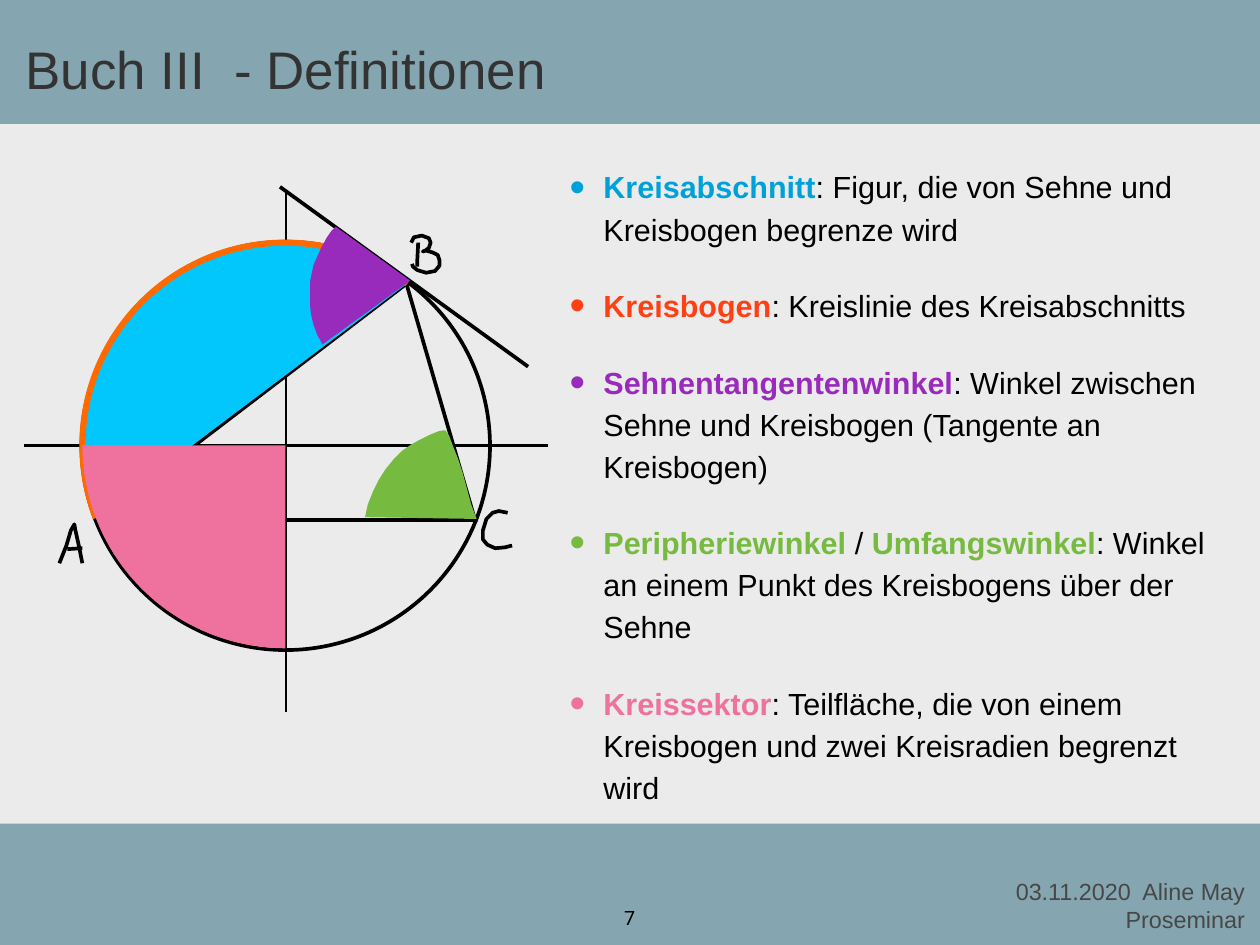
from dataclasses import dataclass
from math import cos, radians, sin

from lxml import etree
from pptx import Presentation
from pptx.dml.color import RGBColor
from pptx.enum.shapes import MSO_CONNECTOR, MSO_SHAPE
from pptx.enum.text import MSO_ANCHOR, MSO_AUTO_SIZE, PP_ALIGN
from pptx.oxml.ns import qn
from pptx.util import Emu, Pt

RECTANGLE, OVAL = MSO_SHAPE.RECTANGLE, MSO_SHAPE.OVAL
STRAIGHT = MSO_CONNECTOR.STRAIGHT
TOP, MIDDLE, BOTTOM = MSO_ANCHOR.TOP, MSO_ANCHOR.MIDDLE, MSO_ANCHOR.BOTTOM
LEFT, CENTER, RIGHT = PP_ALIGN.LEFT, PP_ALIGN.CENTER, PP_ALIGN.RIGHT
NO_AUTOFIT = MSO_AUTO_SIZE.NONE

EMU_PER_PX = 9144  # 100 px to the inch
BLACK = "000000"
BAND, BAND_OPACITY = "004D65", 43
CX, CY, RADIUS = 322, 503, 229  # circle of the diagram
ANGLE_A, ANGLE_B = 201, 53


@dataclass
class Line:
    start: tuple
    end: tuple
    width: int = 3


@dataclass
class Outline:
    points: list
    fill: str = ""
    line: str = ""
    width: int = 3


@dataclass
class Definition:
    """Wording alternates between coloured terms and plain text."""
    color: str
    wording: tuple


def px(value: float) -> Emu:
    return Emu(round(value * EMU_PER_PX))


def rgb(color: str) -> RGBColor:
    return RGBColor.from_string(color)


def arc(start: int, end: int) -> list:
    """Points on the circle, angles counted anticlockwise in degrees."""
    step = 2 if end > start else -2
    angles = [*range(start, end, step), end]
    return [(CX + RADIUS * cos(radians(a)), CY - RADIUS * sin(radians(a))) for a in angles]


LINES = [
    Line((107, 589), (462, 318)),
    Line((316, 211), (596, 414)),
    Line((537, 590), (458, 318)),
    Line((109, 587), (536, 587)),
    Line((323, 804), (323, 214), 2),
    Line((27, 503), (619, 503), 2),
]
LETTERS = [
    [(67, 636), (75, 616), (80, 599), (84, 592), (85, 598), (89, 616), (93, 636)],
    [(76, 620), (93, 619)],
    [(472, 274), (471, 293), (471, 301)],
    [(464, 274), (467, 268), (476, 266), (484, 269), (486, 274), (484, 280), (480, 283),
     (477, 284), (481, 283), (488, 285), (494, 288), (496, 294), (496, 300), (491, 306),
     (481, 308), (471, 305), (466, 301), (465, 298)],
    [(573, 579), (563, 577), (556, 579), (549, 586), (545, 599), (545, 609), (550, 615),
     (559, 619), (570, 618), (578, 616)],
]
TANGENT_ANGLE = [
    (463, 317), (364, 389), (362, 385), (358, 378), (354, 367), (351, 355), (350, 345),
    (350, 318), (352, 308), (354, 299), (358, 290), (362, 281), (369, 268), (374, 261),
    (379, 256),
]
INSCRIBED_ANGLE = [
    (412, 584), (415, 570), (421, 555), (428, 541), (435, 530), (444, 519), (454, 509),
    (464, 502), (473, 497), (485, 491), (495, 487), (500, 486), (503, 486), (507, 492),
    (511, 503), (517, 518), (522, 533), (525, 544), (532, 570), (538, 586),
]
REGIONS = [
    Outline(arc(ANGLE_A, ANGLE_B), fill="01C7FC"),
    Outline(arc(ANGLE_B, ANGLE_A), line="FF6A00", width=5),
    Outline(TANGENT_ANGLE, fill="982ABC"),
    Outline(INSCRIBED_ANGLE, fill="76BB40"),
    Outline([*arc(180, 270), (CX, CY)], fill="EE719E"),
]
DEFINITIONS = [
    Definition("00A1D8", ("Kreisabschnitt", ": Figur, die von Sehne und Kreisbogen begrenze wird")),
    Definition("FF4015", ("Kreisbogen", ": Kreislinie des Kreisabschnitts")),
    Definition("982ABC", ("Sehnentangentenwinkel",
                          ": Winkel zwischen Sehne und Kreisbogen (Tangente an Kreisbogen)")),
    Definition("76BB40", ("Peripheriewinkel", " / ", "Umfangswinkel",
                          ": Winkel an einem Punkt des Kreisbogens über der Sehne")),
    Definition("EE719E", ("Kreissektor",
                          ": Teilfläche, die von einem Kreisbogen und zwei Kreisradien begrenzt wird")),
]


def style_font(font, size: float, color: str, name: str = "Arial", bold: bool = False) -> None:
    font.size, font.name, font.bold = Pt(size), name, bold
    font.color.rgb = rgb(color)


def set_frame(sp, box: tuple, anchor, wrap: bool = True):
    """Place a text shape and return its prepared text frame."""
    sp.left, sp.top, sp.width, sp.height = map(px, box)
    tf = sp.text_frame
    tf.auto_size, tf.word_wrap, tf.vertical_anchor = NO_AUTOFIT, wrap, anchor
    tf.margin_left = tf.margin_top = tf.margin_right = tf.margin_bottom = px(6)
    return tf


def write(tf, text: str, size: float, color: str, align, name: str = "Arial") -> None:
    tf.text = text
    for p in tf.paragraphs:
        p.alignment = align
        for r in p.runs:
            style_font(r.font, size, color, name)


def add_band(shapes, top: int) -> None:
    sp = shapes.add_shape(RECTANGLE, px(-11), px(top), px(1443), px(141))
    paint(sp, BAND, "", 0)
    color = next(sp._element.spPr.iter(qn("a:srgbClr")))
    etree.SubElement(color, qn("a:alpha"), val=str(BAND_OPACITY * 1000))


def paint(sp, fill: str, line: str, width: int) -> None:
    sp.shadow.inherit = False
    if fill:
        sp.fill.solid()
        sp.fill.fore_color.rgb = rgb(fill)
    else:
        sp.fill.background()
    if line:
        sp.line.color.rgb = rgb(line)
        sp.line.width = Pt(width)
    else:
        sp.line.fill.background()


def add_line(shapes, line: Line) -> None:
    cn = shapes.add_connector(STRAIGHT, *map(px, line.start + line.end))
    cn.line.color.rgb = rgb(BLACK)
    cn.line.width = Pt(line.width)
    etree.SubElement(cn._element.spPr, qn("a:effectLst"))


def add_outline(shapes, outline: Outline) -> None:
    points = [(px(x), px(y)) for x, y in outline.points]
    builder = shapes.build_freeform(*points[0])
    builder.add_line_segments(points[1:], close=bool(outline.fill))
    paint(builder.convert_to_shape(), outline.fill, outline.line, outline.width)


def add_definition(p, definition: Definition) -> None:
    p.line_spacing, p.space_before = 1.15, Pt(28)
    pPr = p._p.get_or_add_pPr()
    pPr.set("marL", str(px(38)))
    pPr.set("indent", str(px(-38)))
    etree.SubElement(pPr, qn("a:buSzPct"), val="145000")
    etree.SubElement(pPr, qn("a:buChar"), char="•")
    for i, text in enumerate(definition.wording):
        r = p.add_run()
        r.text = text
        is_term = i % 2 == 0
        style_font(r.font, 24.8, definition.color if is_term else BLACK, bold=is_term)


def main() -> None:
    prs = Presentation()
    prs.slide_width, prs.slide_height = px(1422), px(1067)
    slide = prs.slides.add_slide(prs.slide_layouts[1])
    slide.background.fill.solid()
    slide.background.fill.fore_color.rgb = rgb("EBEBEB")
    shapes = slide.shapes
    title, body = shapes.title, slide.placeholders[1]

    for top in (-1, 930):
        add_band(shapes, top)
    for sp in (body, title):  # bring the text in front of the bands
        sp._element.getparent().append(sp._element)

    write(set_frame(title, (23, 20, 1320, 99), BOTTOM), "Buch III  - Definitionen", 43, "333333", LEFT)
    tf = set_frame(body, (637, 178, 770, 716), TOP)
    for i, definition in enumerate(DEFINITIONS):
        add_definition(tf.add_paragraph() if i else tf.paragraphs[0], definition)

    footer = set_frame(shapes.add_textbox(0, 0, 0, 0), (879, 986, 532, 71), MIDDLE)
    write(footer, "03.11.2020  Aline May\nProseminar", 19, "474747", RIGHT)
    number = set_frame(shapes.add_textbox(0, 0, 0, 0), (698, 1017, 25, 35), TOP, wrap=False)
    write(number, "7", 16, BLACK, CENTER, "Roboto")

    circle = shapes.add_shape(OVAL, px(92), px(273), px(461), px(461))
    paint(circle, "", BLACK, 3)
    for line in LINES:
        add_line(shapes, line)
    for stroke in LETTERS:
        add_outline(shapes, Outline(stroke, line=BLACK))
    for region in REGIONS:
        add_outline(shapes, region)

    prs.save("out.pptx")


if __name__ == "__main__":
    main()
